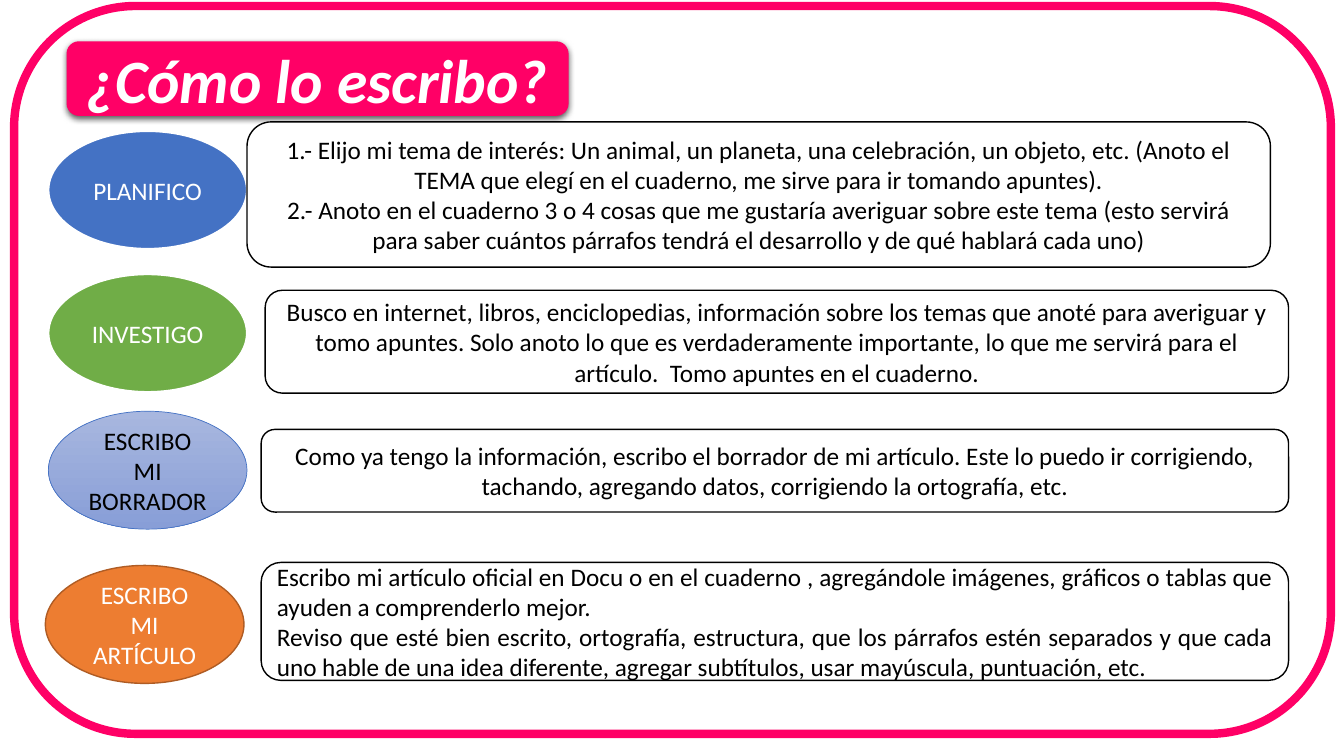
"""Build the slide that explains how to write an article in four steps."""
from lxml.etree import SubElement
from pptx import Presentation
from pptx.dml.color import RGBColor
from pptx.enum.shapes import MSO_SHAPE
from pptx.enum.text import MSO_ANCHOR, PP_ALIGN
from pptx.oxml.ns import qn
from pptx.util import Inches, Pt

PINK = RGBColor(0xFF, 0x00, 0x66)
WHITE = RGBColor(0xFF, 0xFF, 0xFF)
BLACK = RGBColor(0x00, 0x00, 0x00)
BLUE = RGBColor(0x44, 0x72, 0xC4)
GREEN = RGBColor(0x70, 0xAD, 0x47)
ORANGE = RGBColor(0xED, 0x7D, 0x31)
BROWN = RGBColor(0xAF, 0x5C, 0x24)
LIGHT_BLUE = RGBColor(0xA8, 0xB7, 0xDF)
MID_BLUE = RGBColor(0x88, 0x9E, 0xD7)

FRAME = (0.14, 0.06, 13.06, 7.22)
TITLE = (0.66, 0.41, 4.98, 0.74)
TITLE_FORMAT = {"size": Pt(44), "bold": True, "italic": True}
BODY_FORMAT = {"size": Pt(18)}
OVAL_SIZE = (1.97, 1.17)

STEPS = [
    {
        "label": "PLANIFICO", "oval": (0.48, 1.3), "fills": [BLUE],
        "line": (WHITE, 1.5), "color": WHITE,
        "box": (2.45, 1.21, 10.15, 1.44), "align": PP_ALIGN.CENTER,
        "texts": [
            "1.- Elijo mi tema de interés: Un animal, un planeta, una celebración, "
            "un objeto, etc. (Anoto el TEMA que elegí en el cuaderno, me sirve "
            "para ir tomando apuntes).",
            "2.- Anoto en el cuaderno 3 o 4 cosas que me gustaría averiguar sobre "
            "este tema (esto servirá para saber cuántos párrafos tendrá el "
            "desarrollo y de qué hablará cada uno)",
        ],
    },
    {
        "label": "INVESTIGO", "oval": (0.48, 2.72), "fills": [GREEN],
        "line": (WHITE, 1.5), "color": WHITE,
        "box": (2.63, 2.88, 10.15, 1.02), "align": PP_ALIGN.CENTER,
        "texts": [
            "Busco en internet, libros, enciclopedias, información sobre los temas "
            "que anoté para averiguar y tomo apuntes. Solo anoto lo que es "
            "verdaderamente importante, lo que me servirá para el artículo.  "
            "Tomo apuntes en el cuaderno.",
        ],
    },
    {
        "label": "ESCRIBO MI BORRADOR", "oval": (0.48, 4.08),
        "fills": [LIGHT_BLUE, MID_BLUE], "line": (BLUE, 0.5), "color": BLACK,
        "box": (2.59, 4.26, 10.19, 0.82), "align": PP_ALIGN.CENTER,
        "texts": [
            "Como ya tengo la información, escribo el borrador de mi artículo. "
            "Este lo puedo ir corrigiendo, tachando, agregando datos, corrigiendo "
            "la ortografía, etc.",
        ],
    },
    {
        "label": "ESCRIBO MI ARTÍCULO", "oval": (0.45, 5.61), "fills": [ORANGE],
        "line": (BROWN, 1), "color": WHITE,
        "box": (2.59, 5.58, 10.19, 1.17), "align": PP_ALIGN.JUSTIFY,
        "texts": [
            "Escribo mi artículo oficial en Docu o en el cuaderno , agregándole "
            "imágenes, gráficos o tablas que ayuden a comprenderlo mejor.",
            "Reviso que esté bien escrito, ortografía, estructura, que los párrafos "
            "estén separados y que cada uno hable de una idea diferente, agregar "
            "subtítulos, usar mayúscula, puntuación, etc.",
        ],
    },
]


def paint(shape, fills):
    """Fill a shape with one colour, or with a downward gradient of two."""
    if len(fills) == 1:
        shape.fill.solid()
        shape.fill.fore_color.rgb = fills[0]
        return
    shape.fill.gradient()
    shape.fill.gradient_angle = 270
    for stop, color in zip(shape.fill.gradient_stops, fills):
        stop.color.rgb = color


def add_panel(page, kind, place, fills, line=None):
    """Add a preset shape with its fill and an optional (colour, points) line."""
    shape = page.shapes.add_shape(kind, *(Inches(length) for length in place))
    shape.shadow.inherit = False
    paint(shape, fills)
    if line:
        shape.line.color.rgb = line[0]
        shape.line.width = Pt(line[1])
    else:
        shape.line.fill.background()
    return shape


def write(shape, texts, color, align=PP_ALIGN.CENTER, formats=BODY_FORMAT):
    """Write one paragraph per text, in the middle of the shape."""
    frame = shape.text_frame
    frame.word_wrap = True
    frame.vertical_anchor = MSO_ANCHOR.MIDDLE
    for index, text in enumerate(texts):
        para = frame.add_paragraph() if index else frame.paragraphs[0]
        para.alignment = align
        span = para.add_run()
        span.text = text
        span.font.color.rgb = color
        for name, value in {"name": "Calibri", **formats}.items():
            setattr(span.font, name, value)


def add_shadow(shape):
    """Give a shape a soft black shadow below it."""
    effects = shape.element.spPr.find(qn("a:effectLst"))
    shadow = SubElement(effects, qn("a:outerShdw"), blurRad=str(Pt(4.5)),
                        dist=str(Pt(1.5)), dir="5400000", algn="ctr",
                        rotWithShape="0")
    color = SubElement(shadow, qn("a:srgbClr"), val="000000")
    SubElement(color, qn("a:alpha"), val="63000")


def add_title(page):
    """Add the pink title banner."""
    banner = add_panel(page, MSO_SHAPE.ROUNDED_RECTANGLE, TITLE, [PINK])
    add_shadow(banner)
    write(banner, ["¿Cómo lo escribo?"], WHITE, formats=TITLE_FORMAT)


def add_step(page, step):
    """Add the oval label of a step and the box that explains it."""
    oval = add_panel(page, MSO_SHAPE.OVAL, step["oval"] + OVAL_SIZE,
                     step["fills"], step["line"])
    write(oval, [step["label"]], step["color"])
    box = add_panel(page, MSO_SHAPE.ROUNDED_RECTANGLE, step["box"],
                    [WHITE], (BLACK, 1))
    write(box, step["texts"], BLACK, step["align"])


def main():
    """Build and save the deck."""
    deck = Presentation()
    deck.slide_width = Inches(13.33)
    deck.slide_height = Inches(7.5)
    page = deck.slides.add_slide(deck.slide_layouts[6])
    add_panel(page, MSO_SHAPE.ROUNDED_RECTANGLE, FRAME, [WHITE], (PINK, 6))
    add_title(page)
    for step in STEPS:
        add_step(page, step)
    deck.save("out.pptx")


if __name__ == "__main__":
    main()
